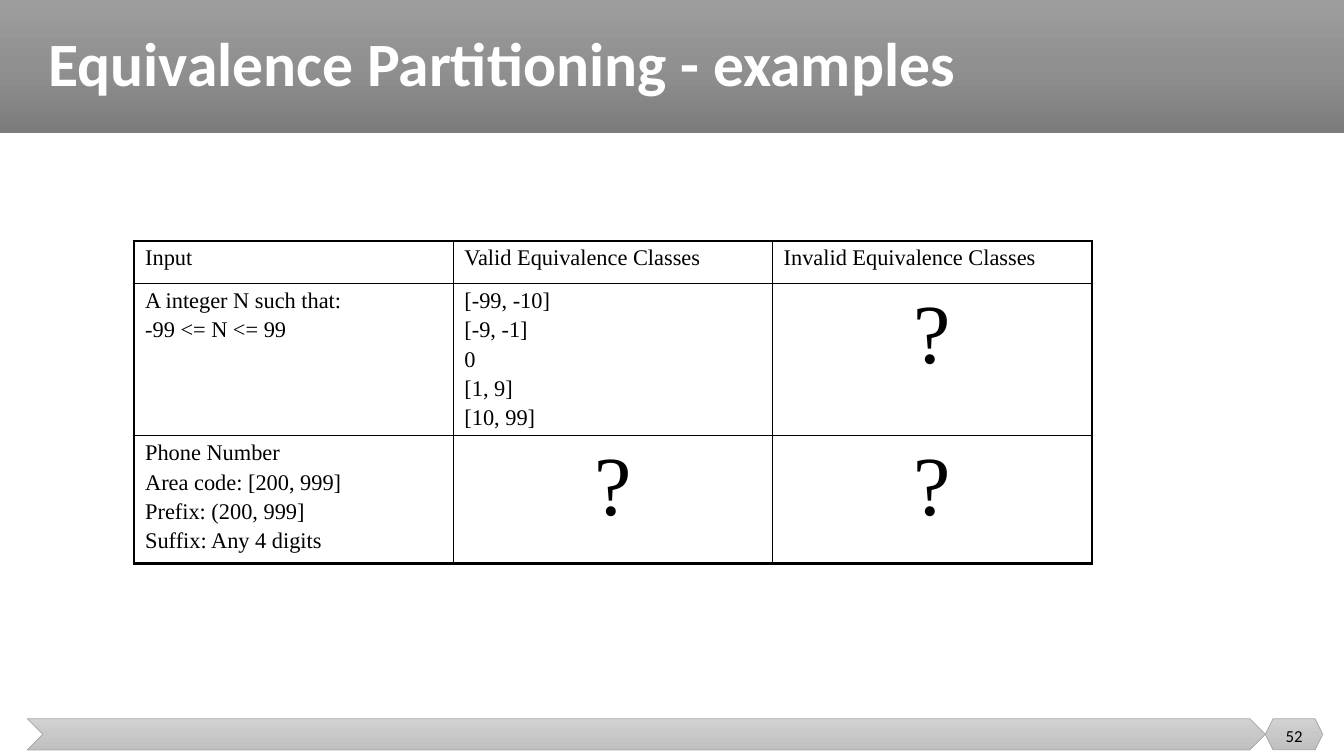
from copy import deepcopy
from dataclasses import dataclass

from lxml.etree import SubElement
from pptx import Presentation
from pptx.dml.color import RGBColor
from pptx.enum.shapes import MSO_SHAPE as Preset
from pptx.enum.text import MSO_ANCHOR as Anchor, PP_ALIGN as Align
from pptx.oxml.ns import qn
from pptx.util import Inches, Pt


@dataclass(frozen=True)
class Theme:
    heading_font: str = "Calibri"
    table_font: str = "Times New Roman"
    title_size: int = 44
    cell_size: int = 16
    question_size: int = 60
    number_size: int = 12
    white: str = "FFFFFF"
    black: str = "000000"
    outline: str = "A5A5A5"
    header_gradient: tuple = ("9D9D9D", "909090", "7C7C7C")
    footer_gradient: tuple = ("D2D2D2", "C8C8C8", "C0C0C0")
    outer_border: float = 2.25
    inner_border: float = 1


class SlideBuilder:
    def __init__(self, presentation, theme):
        self.theme = theme
        self.slide = presentation.slides.add_slide(presentation.slide_layouts[5])

    def style(self, paragraph, font_name, size, color, bold=False):
        font = paragraph.font
        font.name, font.size, font.bold = font_name, Pt(size), bold
        font.color.rgb = RGBColor.from_string(color)

    def band(self, preset, box, colors, outlined=True):
        """Add a shape with an evenly spaced top-to-bottom gradient."""
        shape = self.slide.shapes.add_shape(preset, *map(Inches, box))
        shape.shadow.inherit = False
        shape.fill.gradient()
        shape.fill.gradient_angle = 270
        stop_list = shape.fill._xPr.find(".//" + qn("a:gsLst"))
        stop_list.append(deepcopy(stop_list[0]))
        for index, (stop, color) in enumerate(zip(shape.fill.gradient_stops, colors)):
            stop.position = index / (len(colors) - 1)
            stop.color.rgb = RGBColor.from_string(color)
        if outlined:
            shape.line.color.rgb = RGBColor.from_string(self.theme.outline)
            shape.line.width = Pt(0.5)
        else:
            shape.line.fill.background()

    def title(self, text, box):
        title = self.slide.shapes.title
        title.left, title.top, title.width, title.height = map(Inches, box)
        title.text_frame.text = text
        title.text_frame.vertical_anchor = Anchor.MIDDLE
        paragraph = title.text_frame.paragraphs[0]
        paragraph.alignment = Align.LEFT
        paragraph.line_spacing = 0.9
        self.style(paragraph, self.theme.heading_font, self.theme.title_size,
                   self.theme.white, bold=True)
        # Bring the title in front of the header band
        self.slide.shapes._spTree.append(title._element)

    def page_number(self, text, box):
        frame = self.slide.shapes.add_textbox(*map(Inches, box)).text_frame
        frame.word_wrap = True
        frame.vertical_anchor = Anchor.MIDDLE
        frame.text = text
        paragraph = frame.paragraphs[0]
        paragraph.alignment = Align.CENTER
        self.style(paragraph, self.theme.heading_font, self.theme.number_size,
                   self.theme.black)

    def table(self, rows, left, top, width, row_heights):
        row_count, column_count = len(rows), len(rows[0])
        table = self.slide.shapes.add_table(
            row_count, column_count, Inches(left), Inches(top),
            Inches(width), Inches(sum(row_heights))).table
        table.first_row = table.horz_banding = False
        for row, height in zip(table.rows, row_heights):
            row.height = Inches(height)
        for r, texts in enumerate(rows):
            for c, text in enumerate(texts):
                cell = table.cell(r, c)
                self.cell_text(cell, text)
                cell.fill.background()
                self.cell_borders(cell, {
                    "L": c == 0, "R": c == column_count - 1,
                    "T": r == 0, "B": r == row_count - 1})

    def cell_text(self, cell, text):
        cell.margin_left = cell.margin_right = Inches(0.11)
        cell.margin_top = cell.margin_bottom = Inches(0.05)
        cell.text_frame.text = text
        is_question = text == "?"
        size = self.theme.question_size if is_question else self.theme.cell_size
        for paragraph in cell.text_frame.paragraphs:
            paragraph.alignment = Align.CENTER if is_question else Align.LEFT
            self.style(paragraph, self.theme.table_font, size, self.theme.black)
            # Space before as a share of the text size
            properties = paragraph._p.get_or_add_pPr()
            space = SubElement(properties, qn("a:spcBef"))
            SubElement(space, qn("a:spcPct"), val="20000")
            properties.insert(0, space)

    def cell_borders(self, cell, outer_sides):
        properties = cell._tc.get_or_add_tcPr()
        for index, (side, is_outer) in enumerate(outer_sides.items()):
            width = self.theme.outer_border if is_outer else self.theme.inner_border
            line = SubElement(properties, qn(f"a:ln{side}"), w=str(Pt(width)))
            fill = SubElement(line, qn("a:solidFill"))
            SubElement(fill, qn("a:srgbClr"), val=self.theme.black)
            properties.insert(index, line)


def main():
    presentation = Presentation()
    presentation.slide_width, presentation.slide_height = Inches(13.33), Inches(7.5)
    theme = Theme()
    builder = SlideBuilder(presentation, theme)

    builder.band(Preset.RECTANGLE, (0, 0, 13.33, 1.32), theme.header_gradient,
                 outlined=False)
    builder.band(Preset.CHEVRON, (0.27, 7.13, 12.28, 0.31), theme.footer_gradient)
    builder.band(Preset.HEXAGON, (12.55, 7.13, 0.57, 0.31), theme.footer_gradient)
    builder.title("Equivalence Partitioning - examples", (0.38, 0, 12.74, 1.32))
    builder.table([
        ("Input", "Valid Equivalence Classes", "Invalid Equivalence Classes"),
        ("A integer N such that:\n-99 <= N <= 99",
         "[-99, -10]\n[-9, -1]\n0\n[1, 9]\n[10, 99]", "?"),
        ("Phone Number\nArea code: [200, 999]\nPrefix: (200, 999]\n"
         "Suffix: Any 4 digits", "?", "?"),
    ], left=1.33, top=2.39, width=9.5, row_heights=(0.42, 1.51, 1.27))
    builder.page_number("52", (12.55, 7.1, 0.57, 0.4))

    presentation.save("out.pptx")


if __name__ == "__main__":
    main()
